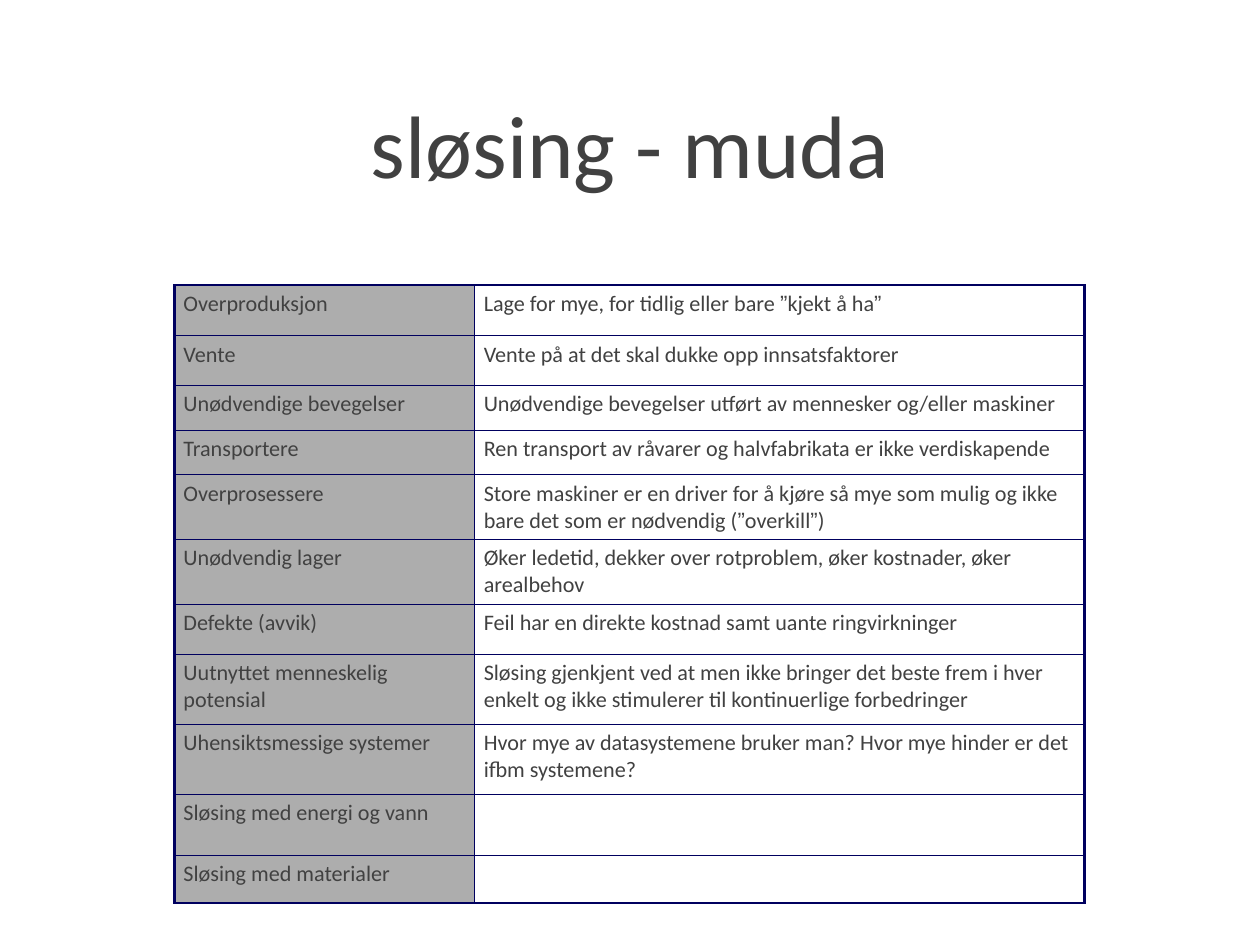
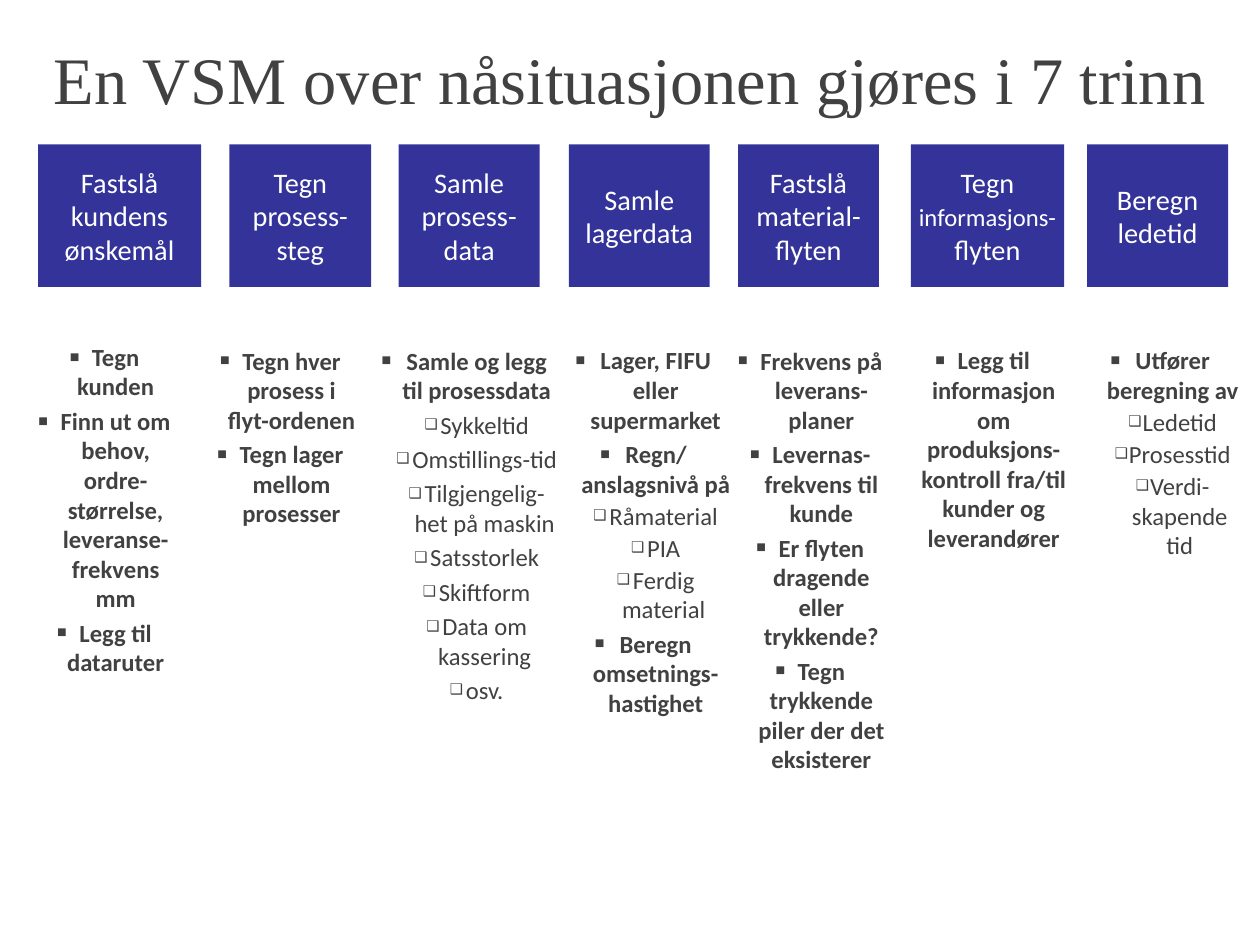
from itertools import groupby
from lxml.etree import SubElement
from pptx import Presentation
from pptx.dml.color import RGBColor
from pptx.enum.shapes import MSO_SHAPE
from pptx.enum.text import MSO_ANCHOR, MSO_AUTO_SIZE, PP_ALIGN
from pptx.oxml.ns import qn
from pptx.util import Pt

PX = 9144  # 100 px to the inch
GREY = RGBColor(0x41, 0x41, 0x41)
SILVER = RGBColor(0xAD, 0xAD, 0xAD)
NAVY = RGBColor(0x00, 0x00, 0x5F)
BLUE = RGBColor(0x33, 0x33, 0x99)
WHITE = RGBColor(0xFF, 0xFF, 0xFF)
FONT = "Calibri"

deck = Presentation()
deck.slide_width, deck.slide_height = 1422 * PX, 1067 * PX


def add_run(para, text, size, color=GREY, name=FONT, bold=False):
    run = para.add_run()
    run.text = text
    font = run.font
    font.size, font.name, font.bold = Pt(size), name, bold
    font.color.rgb = color


def add_slide(text, top, size, name=FONT, foot=6):
    """Add a titled slide; foot is the inset below the title."""
    slide = deck.slides.add_slide(deck.slide_layouts[5])
    title = slide.shapes.title
    title.left, title.top = 39 * PX, top * PX
    title.width, title.height = 1344 * PX, 267 * PX
    frame = title.text_frame
    frame.auto_size = MSO_AUTO_SIZE.NONE
    frame.word_wrap = True
    frame.vertical_anchor = MSO_ANCHOR.MIDDLE
    frame.margin_left = frame.margin_right = frame.margin_top = 6 * PX
    frame.margin_bottom = foot * PX
    para = frame.paragraphs[0]
    para.alignment = PP_ALIGN.CENTER
    add_run(para, text, size, name=name)
    return slide


# Slide 1: kinds of waste
ROWS = [
    (57, "Overproduksjon", "Lage for mye, for tidlig eller bare ”kjekt å ha”"),
    (56, "Vente", "Vente på at det skal dukke opp innsatsfaktorer"),
    (51, "Unødvendige bevegelser",
     "Unødvendige bevegelser utført av mennesker og/eller maskiner"),
    (50, "Transportere",
     "Ren transport av råvarer og halvfabrikata er ikke verdiskapende"),
    (71, "Overprosessere",
     "Store maskiner er en driver for å kjøre så mye som mulig og ikke "
     "bare det som er nødvendig (”overkill”)"),
    (71, "Unødvendig lager",
     "Øker ledetid, dekker over rotproblem, øker kostnader, øker arealbehov"),
    (57, "Defekte (avvik)",
     "Feil har en direkte kostnad samt uante ringvirkninger"),
    (79, "Uutnyttet menneskelig potensial",
     "Sløsing gjenkjent ved at men ikke bringer det beste frem i hver "
     "enkelt og ikke stimulerer til kontinuerlige forbedringer"),
    (79, "Uhensiktsmessige systemer",
     "Hvor mye av datasystemene bruker man? Hvor mye hinder er det ifbm "
     "systemene?"),
    (69, "Sløsing med energi og vann", ""),
    (54, "Sløsing med materialer", ""),
]
WIDTHS = [339, 688]
slide = add_slide("sløsing - muda", 28, 72)
high = sum(row[0] for row in ROWS)
table = slide.shapes.add_table(len(ROWS), 2, 197 * PX, 322 * PX,
                               sum(WIDTHS) * PX, high * PX).table
table.first_row = table.horz_banding = False
for col, width in zip(table.columns, WIDTHS):
    col.width = width * PX
last = len(ROWS) - 1
for r, (height, *texts) in enumerate(ROWS):
    table.rows[r].height = height * PX
    for c, text in enumerate(texts):
        cell = table.cell(r, c)
        cell.margin_left = 10 * PX
        cell.margin_right = cell.margin_top = cell.margin_bottom = 6 * PX
        props = cell._tc.get_or_add_tcPr()
        outer = {"L": c == 0, "R": c == 1, "T": r == 0, "B": r == last}
        for side, edge in outer.items():
            line = SubElement(props, qn(f"a:ln{side}"),
                              w=str(Pt(2.25 if edge else 1)))
            fill = SubElement(line, qn("a:solidFill"))
            SubElement(fill, qn("a:srgbClr"), val=str(NAVY))
        if c == 0:
            cell.fill.solid()
            cell.fill.fore_color.rgb = SILVER
        else:
            cell.fill.background()
        para = cell.text_frame.paragraphs[0]
        for quote, part in groupby(text, lambda sign: sign == "”"):
            add_run(para, "".join(part), 18, name="Arial" if quote else FONT)

# Slide 2: seven steps
# In heads, text between bars is smaller
HEADS = [
    (43, 184, "Fastslå kundens ønskemål"),
    (259, 160, "Tegn prosess-steg"),
    (450, 159, "Samle prosess-data"),
    (642, 159, "Samle lagerdata"),
    (833, 159, "Fastslå material-flyten"),
    (1028, 173, "Tegn |informasjons-| flyten"),
    (1227, 159, "Beregn ledetid"),
]
WIDE, SLIM = (53, 25), (28, 28)
SUB, TIGHT = (46, 18), (44, 16)
# Box, indents of main and sub points, space before sub points, points;
# sub points start with >
LISTS = [
    ((12, 386, 184, 384), WIDE, SUB, 4,
     ["Tegn kunden",
      "Finn ut om behov, ordre-størrelse, leveranse-frekvens mm",
      "Legg til dataruter"]),
    ((202, 390, 201, 209), WIDE, SUB, 4,
     ["Tegn hver prosess i flyt-ordenen", "Tegn lager mellom prosesser"]),
    ((419, 390, 210, 418), SLIM, SUB, 4,
     ["Samle og legg til prosessdata", ">Sykkeltid", ">Omstillings-tid",
      ">Tilgjengelig-het på maskin", ">Satsstorlek", ">Skiftform",
      ">Data om kassering", ">osv."]),
    ((622, 390, 208, 360), SLIM, SUB, 2,
     ["Lager, FIFU eller supermarket", "Regn/anslagsnivå på",
      ">Råmaterial", ">PIA", ">Ferdig material",
      "Beregn omsetnings-hastighet"]),
    ((794, 390, 213, 458), WIDE, SUB, 4,
     ["Frekvens på leverans-planer", "Levernas-frekvens til kunde",
      "Er flyten dragende eller trykkende?",
      "Tegn trykkende piler der det eksisterer"]),
    ((984, 390, 222, 236), WIDE, SUB, 4,
     ["Legg til informasjon om produksjons-kontroll fra/til kunder og "
      "leverandører"]),
    ((1221, 390, 177, 246), SLIM, TIGHT, 2,
     ["Utfører beregning av", ">Ledetid", ">Prosesstid",
      ">Verdi-skapende tid"]),
]
slide = add_slide("En VSM over nåsituasjonen gjøres i 7 trinn", -2, 54,
                  "Times New Roman", 92)
for place, main, sub, gap, points in LISTS:
    box = slide.shapes.add_textbox(*(n * PX for n in place))
    frame = box.text_frame
    frame.word_wrap = True
    frame.auto_size = MSO_AUTO_SIZE.SHAPE_TO_FIT_TEXT
    frame.margin_left = frame.margin_right = 0
    frame.margin_top = frame.margin_bottom = 0
    for i, point in enumerate(points):
        para = frame.add_paragraph() if i else frame.paragraphs[0]
        deep = point.startswith(">")
        para.alignment = PP_ALIGN.CENTER
        para.level = int(deep)
        if i:
            para.space_before = Pt(gap if deep else 4)
        left, hang = sub if deep else main
        props = para._p.get_or_add_pPr()
        props.set("marL", str(left * PX))
        props.set("indent", str(-hang * PX))
        tint = SubElement(props, qn("a:buClr"))
        SubElement(tint, qn("a:srgbClr"), val=str(GREY))
        SubElement(props, qn("a:buSzPct"), val="60000" if deep else "65000")
        SubElement(props, qn("a:buFont"), typeface="Arial")
        SubElement(props, qn("a:buChar"), char="❑" if deep else "■")
        add_run(para, point.lstrip(">"), 20, bold=not deep)

for left, width, text in HEADS:
    head = slide.shapes.add_shape(MSO_SHAPE.RECTANGLE, left * PX, 163 * PX,
                                  width * PX, 161 * PX)
    head.shadow.inherit = False
    head.fill.solid()
    head.fill.fore_color.rgb = BLUE
    head.line.fill.background()
    frame = head.text_frame
    frame.word_wrap = True
    frame.vertical_anchor = MSO_ANCHOR.MIDDLE
    frame.margin_left = frame.margin_right = 5 * PX
    frame.margin_top = frame.margin_bottom = 0
    para = frame.paragraphs[0]
    para.alignment = PP_ALIGN.CENTER
    for i, part in enumerate(text.split("|")):
        add_run(para, part, 20 if i % 2 else 23, WHITE)

deck.save("out.pptx")
